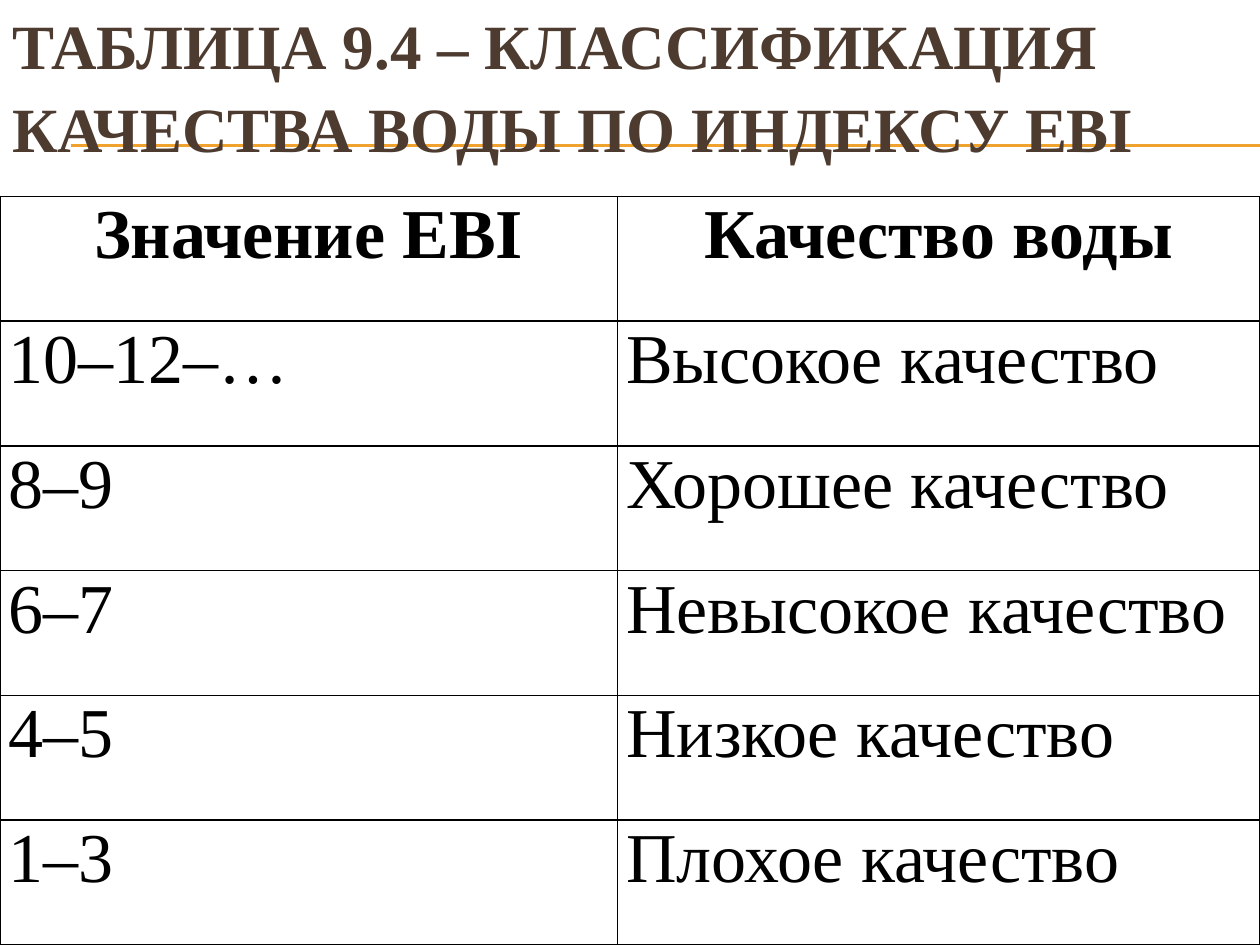
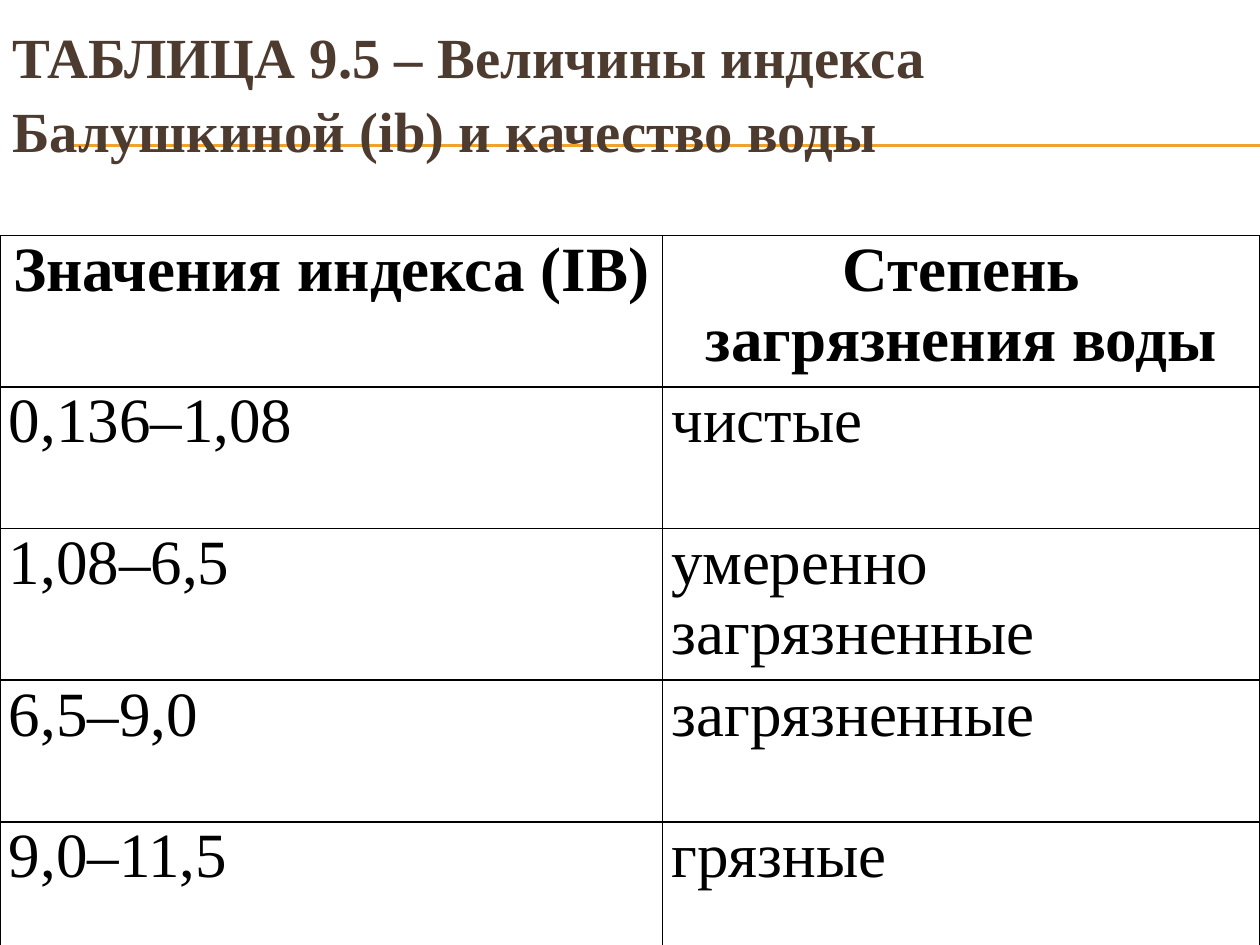
from lxml import etree
from pptx import Presentation
from pptx.dml.color import RGBColor
from pptx.enum.shapes import MSO_CONNECTOR
from pptx.enum.text import MSO_ANCHOR, PP_ALIGN
from pptx.oxml.ns import qn
from pptx.util import Pt

PX = 9144
WIDE, HIGH = 1000, 750
FONT = "Times New Roman"
BROWN, GOLD, BLACK = "4E3B30", "F0A22E", "000000"
LEFT, CENTER, JUST = PP_ALIGN.LEFT, PP_ALIGN.CENTER, PP_ALIGN.JUSTIFY
MIDDLE = MSO_ANCHOR.MIDDLE
STRAIGHT = MSO_CONNECTOR.STRAIGHT


def color(code):
    return RGBColor.from_string(code)


class Deck:
    def __init__(self):
        self.file = Presentation()
        self.file.slide_width = WIDE * PX
        self.file.slide_height = HIGH * PX
        self.slide = None

    def page(self):
        self.slide = self.file.slides.add_slide(self.file.slide_layouts[6])
        for y in (115, 116):
            self.rule(56, y, WIDE, y)

    def rule(self, x1, y1, x2, y2):
        line = self.slide.shapes.add_connector(
            STRAIGHT, x1 * PX, y1 * PX, x2 * PX, y2 * PX)
        line.line.color.rgb = color(GOLD)
        line.line.width = Pt(0.75)
        etree.SubElement(line._element.spPr, qn("a:effectLst"))

    def style(self, para, size, code, bold, align):
        para.alignment = align
        for run in para.runs:
            font = run.font
            font.name = FONT
            font.size = Pt(size)
            font.bold = bold
            font.color.rgb = color(code)

    def title(self, text, high, size):
        box = self.slide.shapes.add_textbox(0, 0, WIDE * PX, high * PX)
        frame = box.text_frame
        frame.word_wrap = True
        frame.vertical_anchor = MIDDLE
        frame.text = text
        para = frame.paragraphs[0]
        para.line_spacing = 1.09
        self.style(para, size, BROWN, True, LEFT)

    def border(self, cell, side, width):
        props = cell._tc.get_or_add_tcPr()
        line = etree.SubElement(props, qn("a:ln" + side), w=str(Pt(width)))
        fill = etree.SubElement(line, qn("a:solidFill"))
        etree.SubElement(fill, qn("a:srgbClr"), val=BLACK)

    def table(self, rows, top, split, size, align):
        high = (HIGH - top) * PX
        grid = self.slide.shapes.add_table(
            len(rows), 2, 0, top * PX, WIDE * PX, high).table
        for col, wide in zip(grid.columns, (split, WIDE - split)):
            col.width = wide * PX
        for r, row in enumerate(rows):
            grid.rows[r].height = high // len(rows)
            for c, text in enumerate(row):
                self.cell(grid.cell(r, c), text, r, size, align)

    def cell(self, cell, text, row, size, align):
        cell.margin_left = cell.margin_right = 7 * PX
        cell.margin_top = cell.margin_bottom = 0
        head = row == 0
        self.border(cell, "L", 1)
        self.border(cell, "R", 1)
        self.border(cell, "T", 1.5 if row == 1 else 1)
        self.border(cell, "B", 1.5 if head else 1)
        cell.fill.background()
        cell.text_frame.text = text
        self.style(cell.text_frame.paragraphs[0], size, BLACK, head,
                   CENTER if head else align)


def main():
    deck = Deck()

    deck.page()
    deck.title("ТАБЛИЦА 9.4 – КЛАССИФИКАЦИЯ КАЧЕСТВА ВОДЫ ПО ИНДЕКСУ EBI",
               131, 36)
    deck.table([
        ("Значение EBI", "Качество воды"),
        ("10–12–…", "Высокое качество"),
        ("8–9", "Хорошее качество"),
        ("6–7", "Невысокое качество"),
        ("4–5", "Низкое качество"),
        ("1–3", "Плохое качество"),
    ], 156, 490, 40, LEFT)

    deck.page()
    deck.title("ТАБЛИЦА 9.5 – Величины индекса Балушкиной (ib) и качество воды",
               142, 32.4)
    deck.table([
        ("Значения индекса (IB)", "Степень загрязнения воды"),
        ("0,136–1,08", "чистые"),
        ("1,08–6,5", "умеренно загрязненные"),
        ("6,5–9,0", "загрязненные"),
        ("9,0–11,5", "грязные"),
    ], 187, 526, 36, JUST)

    deck.file.save("out.pptx")


if __name__ == "__main__":
    main()
